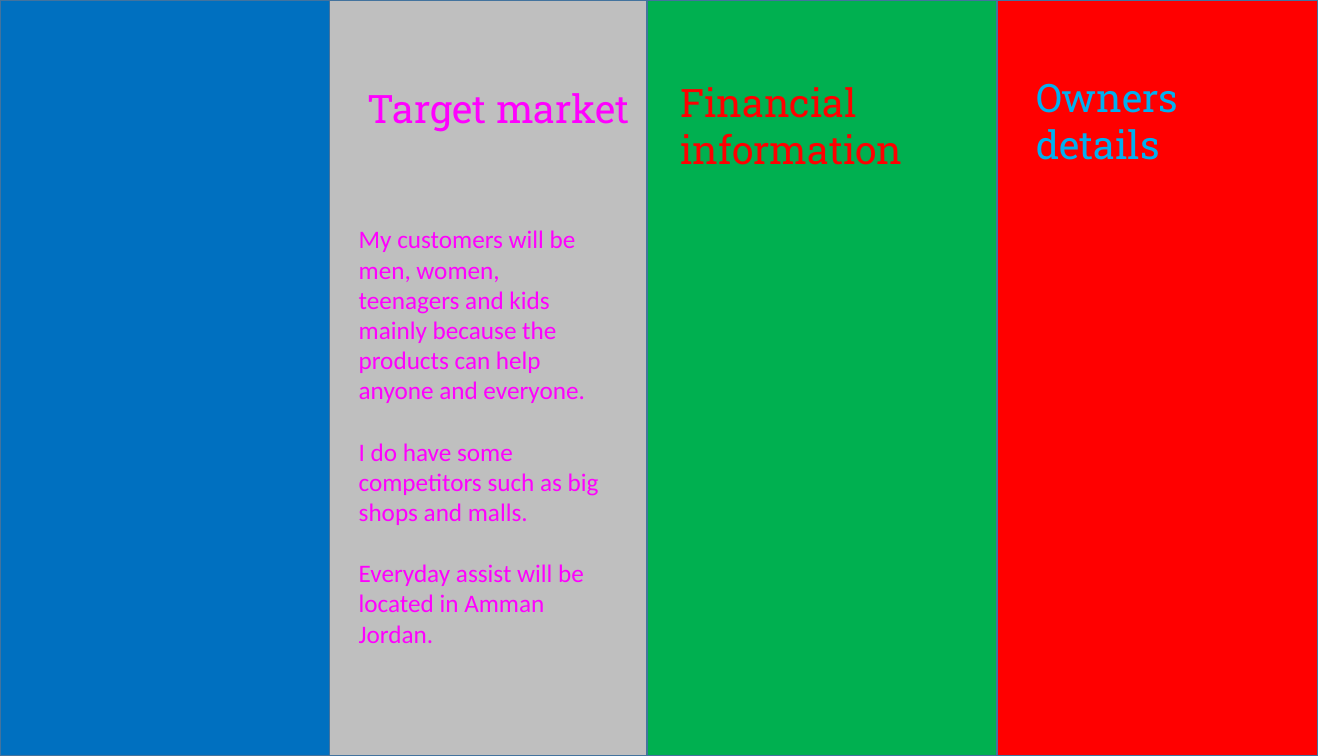
"""Build a four-panel business brochure slide."""
from dataclasses import dataclass

from pptx import Presentation
from pptx.dml.color import RGBColor
from pptx.enum.shapes import MSO_SHAPE
from pptx.enum.text import MSO_AUTO_SIZE
from pptx.slide import Slide
from pptx.util import Pt

SLIDE_WIDTH, SLIDE_HEIGHT = 960, 540
PARAGRAPH_GAP = 22
COLORS = {
    "blue": "0070C0",
    "gray": "BFBFBF",
    "green": "00B050",
    "red": "FF0000",
    "outline": "43739E",
    "magenta": "FF00FF",
    "sky": "00B0F0",
}


@dataclass(frozen=True)
class Panel:
    left: float
    width: float
    color: str


@dataclass(frozen=True)
class TextBlock:
    left: float
    top: float
    width: float
    height: float
    paragraphs: tuple[str, ...]
    color: str
    font: str = "Roboto Slab"
    size: float = 28


PANELS = (
    Panel(233.3, 229, "gray"),
    Panel(462.3, 249.8, "green"),
    Panel(712.1, 229, "red"),
    Panel(0, 235.5, "blue"),
)

TEXT_BLOCKS = (
    TextBlock(255.6, 56.9, 208, 75, ("Target market",), "magenta"),
    TextBlock(478.8, 52.6, 218, 75, ("Financial information",), "red"),
    TextBlock(733, 49, 198, 75, ("Owners details",), "sky"),
    TextBlock(
        249.1, 156.2, 188.6, 312.5,
        (
            "My customers will be men, women, teenagers and kids mainly "
            "because the products can help anyone and everyone.",
            "I do have some competitors such as big shops and malls.",
            "Everyday assist will be located in Amman Jordan.",
        ),
        "magenta", "Calibri", 18,
    ),
)


def color_of(name: str) -> RGBColor:
    return RGBColor.from_string(COLORS[name])


def draw_panel(slide: Slide, panel: Panel) -> None:
    shape = slide.shapes.add_shape(
        MSO_SHAPE.RECTANGLE, Pt(panel.left), 0, Pt(panel.width), Pt(SLIDE_HEIGHT)
    )
    shape.shadow.inherit = False
    shape.fill.solid()
    shape.fill.fore_color.rgb = color_of(panel.color)
    shape.line.color.rgb = color_of("outline")
    shape.line.width = Pt(1)


def draw_text(slide: Slide, block: TextBlock) -> None:
    text_box = slide.shapes.add_textbox(
        Pt(block.left), Pt(block.top), Pt(block.width), Pt(block.height)
    )
    frame = text_box.text_frame
    frame.word_wrap = True
    frame.auto_size = MSO_AUTO_SIZE.SHAPE_TO_FIT_TEXT
    for index, text in enumerate(block.paragraphs):
        paragraph = frame.add_paragraph() if index else frame.paragraphs[0]
        if index:
            paragraph.space_before = Pt(PARAGRAPH_GAP)
        run = paragraph.add_run()
        run.text = text
        run.font.name = block.font
        run.font.size = Pt(block.size)
        run.font.color.rgb = color_of(block.color)


def main() -> None:
    presentation = Presentation()
    presentation.slide_width = Pt(SLIDE_WIDTH)
    presentation.slide_height = Pt(SLIDE_HEIGHT)
    slide = presentation.slides.add_slide(presentation.slide_layouts[6])
    for panel in PANELS:
        draw_panel(slide, panel)
    for block in TEXT_BLOCKS:
        draw_text(slide, block)
    presentation.save("out.pptx")


if __name__ == "__main__":
    main()
